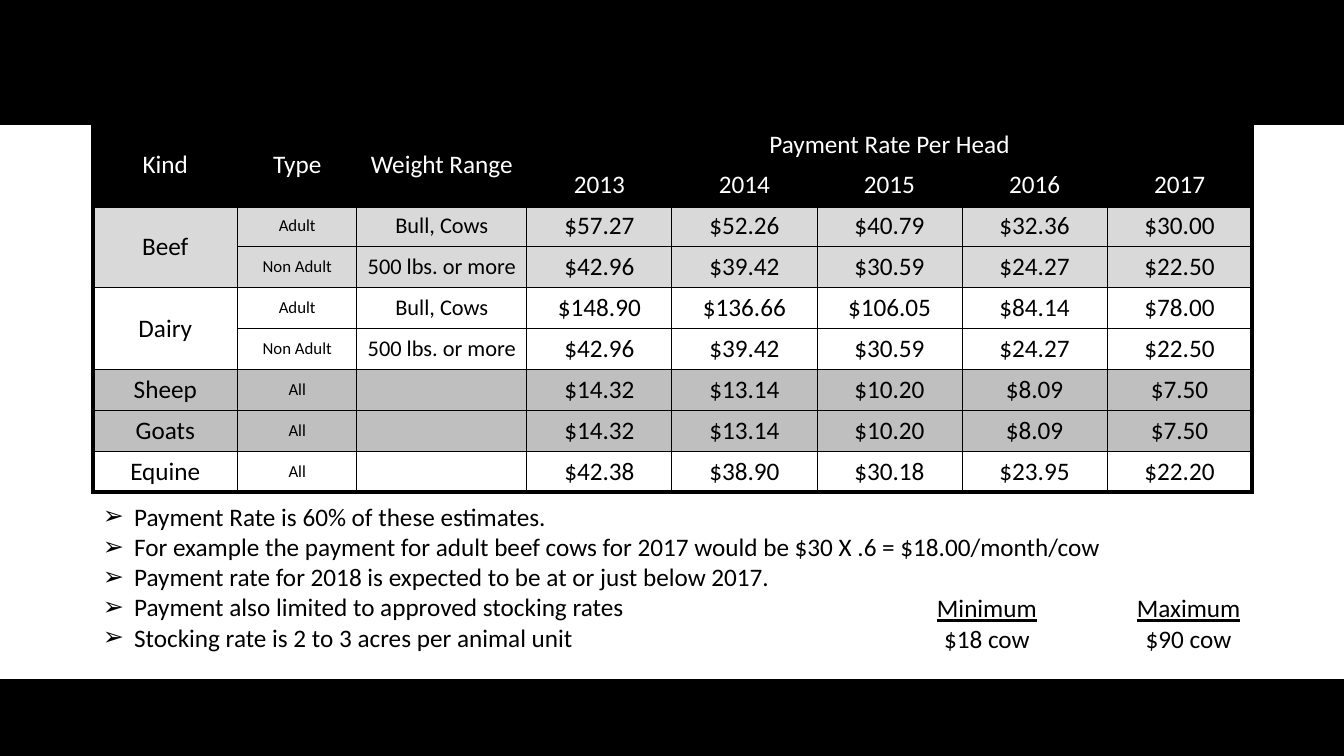
from lxml import etree
from pptx import Presentation
from pptx.dml.color import RGBColor
from pptx.enum.shapes import MSO_SHAPE
from pptx.enum.text import MSO_ANCHOR, MSO_AUTO_SIZE, PP_ALIGN
from pptx.oxml.ns import qn
from pptx.util import Inches, Pt

RECT = MSO_SHAPE.RECTANGLE
MIDDLE, TOP = MSO_ANCHOR.MIDDLE, MSO_ANCHOR.TOP
CENTER, LEFT = PP_ALIGN.CENTER, PP_ALIGN.LEFT
NO_FIT = MSO_AUTO_SIZE.NONE
BLACK, WHITE, PALE, GRAY = "000000", "FFFFFF", "D9D9D9", "BFBFBF"

WIDTHS = [1.44, 1.18, 1.69] + [1.44] * 5
SIZES = [18, 12, 16] + [18] * 5
FILLS = [BLACK, BLACK, PALE, PALE, WHITE, WHITE, GRAY, GRAY, WHITE]
MERGES = [(0, 0, 1, 0), (0, 1, 1, 1), (0, 2, 1, 2), (0, 3, 0, 7),
          (2, 0, 3, 0), (4, 0, 5, 0)]
RATES = [
    ["Kind", "Type", "Weight Range", "Payment Rate Per Head", "", "", "", ""],
    ["", "", "", "2013", "2014", "2015", "2016", "2017"],
    ["Beef", "Adult", "Bull, Cows", "$57.27", "$52.26", "$40.79", "$32.36", "$30.00"],
    ["", "Non Adult", "500 lbs. or more", "$42.96", "$39.42", "$30.59", "$24.27", "$22.50"],
    ["Dairy", "Adult", "Bull, Cows", "$148.90", "$136.66", "$106.05", "$84.14", "$78.00"],
    ["", "Non Adult", "500 lbs. or more", "$42.96", "$39.42", "$30.59", "$24.27", "$22.50"],
    ["Sheep", "All", "", "$14.32", "$13.14", "$10.20", "$8.09", "$7.50"],
    ["Goats", "All", "", "$14.32", "$13.14", "$10.20", "$8.09", "$7.50"],
    ["Equine", "All", "", "$42.38", "$38.90", "$30.18", "$23.95", "$22.20"],
]
NOTES = [
    "Payment Rate is 60% of these estimates.",
    "For example the payment for adult beef cows for 2017 would be $30 X .6 = $18.00/month/cow",
    "Payment rate for 2018 is expected to be at or just below 2017.",
    "Payment also limited to approved stocking rates",
    "Stocking rate is 2 to 3 acres per animal unit",
]
LIMITS = [("Minimum", "Maximum"), ("$18 cow", "$90 cow")]


def paint(target, color):
    """Give a fill one solid colour."""
    target.solid()
    target.fore_color.rgb = RGBColor.from_string(color)


def write(para, text, size=18, color=BLACK, under=False, align=LEFT):
    """Add one formatted run to a paragraph."""
    para.alignment = align
    run = para.add_run()
    run.text = text
    run.font.name = "Calibri"
    run.font.size = Pt(size)
    run.font.underline = under
    run.font.color.rgb = RGBColor.from_string(color)


def lines(frame, count):
    """Return the given number of paragraphs of a frame."""
    return [frame.paragraphs[0]] + [frame.add_paragraph() for _ in range(count - 1)]


def add_band(slide, left, top, width, height):
    """Draw a black band across the slide."""
    band = slide.shapes.add_shape(RECT, Inches(left), Inches(top), Inches(width), Inches(height))
    band.shadow.inherit = False
    paint(band.fill, BLACK)
    paint(band.line.fill, BLACK)
    band.line.width = Pt(1)


def edge(cell, side, width):
    """Draw one black border of a cell."""
    line = etree.SubElement(cell._tc.get_or_add_tcPr(), qn("a:ln" + side), w=str(Pt(width)))
    fill = etree.SubElement(line, qn("a:solidFill"))
    etree.SubElement(fill, qn("a:srgbClr"), val=BLACK)


def add_rates(slide, left, top, width, height):
    """Build the table of payment rates."""
    rows, cols = len(RATES), len(WIDTHS)
    table = slide.shapes.add_table(rows, cols, Inches(left), Inches(top),
                                   Inches(width), Inches(height)).table
    table.first_row = table.horz_banding = False
    for col, part in zip(table.columns, WIDTHS):
        col.width = Inches(width * part / sum(WIDTHS))
    for row in table.rows:
        row.height = Inches(height / rows)
    for r1, c1, r2, c2 in MERGES:
        table.cell(r1, c1).merge(table.cell(r2, c2))
    for r, row in enumerate(RATES):
        for c, text in enumerate(row):
            cell = table.cell(r, c)
            low, end = r + cell.span_height, c + cell.span_width
            thick = {"L": c == 0, "R": end == cols, "T": r in (0, 2), "B": low in (2, rows)}
            for side, bold in thick.items():
                edge(cell, side, 3 if bold else 0.75)
            paint(cell.fill, FILLS[r])
            cell.vertical_anchor = MIDDLE
            cell.margin_left = cell.margin_right = Inches(0.07)
            if text:
                head = r < 2
                write(cell.text_frame.paragraphs[0], text, size=18 if head else SIZES[c],
                      color=WHITE if head else BLACK, align=CENTER)


def add_notes(slide, left, top, width, height):
    """Fill the body placeholder with arrow bullets."""
    body = slide.placeholders[1]
    body.left, body.top = Inches(left), Inches(top)
    body.width, body.height = Inches(width), Inches(height)
    frame = body.text_frame
    frame.auto_size, frame.vertical_anchor = NO_FIT, TOP
    for para, text in zip(lines(frame, len(NOTES)), NOTES):
        props = para._p.get_or_add_pPr()
        props.set("marL", str(Inches(0.31)))
        props.set("indent", str(-Inches(0.31)))
        etree.SubElement(props, qn("a:buChar"), char="➢")
        para.space_before = Pt(0)
        write(para, text)


def add_limits(slide, left, top, width, height):
    """Set the payment limits on two centred tabs."""
    box = slide.shapes.add_textbox(Inches(left), Inches(top), Inches(width), Inches(height))
    box.text_frame.word_wrap = True
    for para, pair in zip(lines(box.text_frame, len(LIMITS)), LIMITS):
        tabs = etree.SubElement(para._p.get_or_add_pPr(), qn("a:tabLst"))
        for stop in (1.5, 3.5):
            etree.SubElement(tabs, qn("a:tab"), pos=str(Inches(stop)), algn="ctr")
        for text in pair:
            write(para, "\t")
            write(para, text, under=pair is LIMITS[0])


def main():
    """Build and save the slide."""
    deck = Presentation()
    deck.slide_width, deck.slide_height = Inches(13.33), Inches(7.5)
    slide = deck.slides.add_slide(deck.slide_layouts[1])
    title = slide.shapes.title._element
    title.getparent().remove(title)
    add_band(slide, 0, 0, 13.33, 1.23)
    add_band(slide, 0, 6.74, 13.33, 0.76)
    add_rates(slide, 0.92, 1.23, 11.5, 3.65)
    add_notes(slide, 0.92, 4.92, 11.5, 1.62)
    add_limits(slide, 8.19, 5.83, 4.64, 0.71)
    deck.save("out.pptx")


if __name__ == "__main__":
    main()
